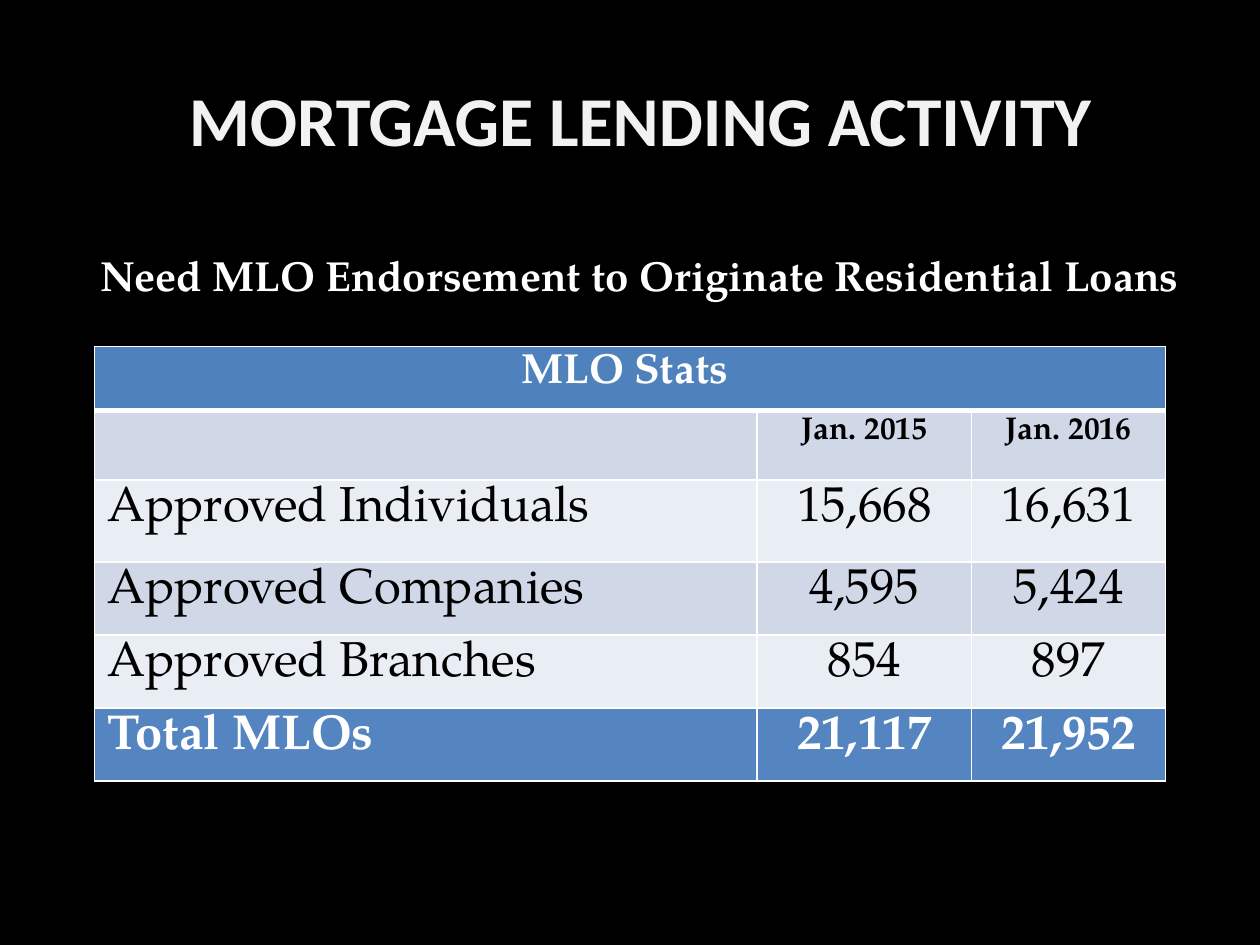
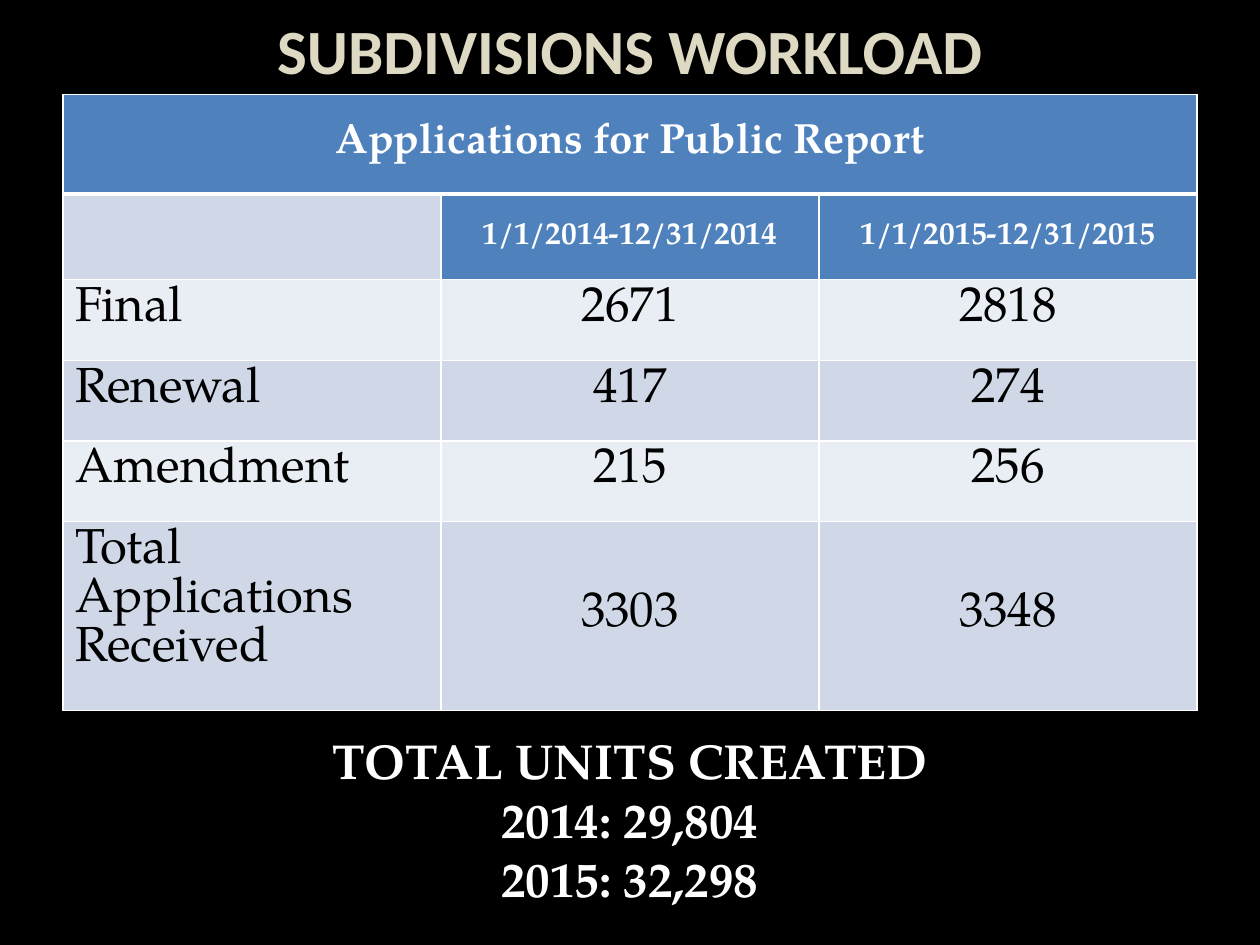
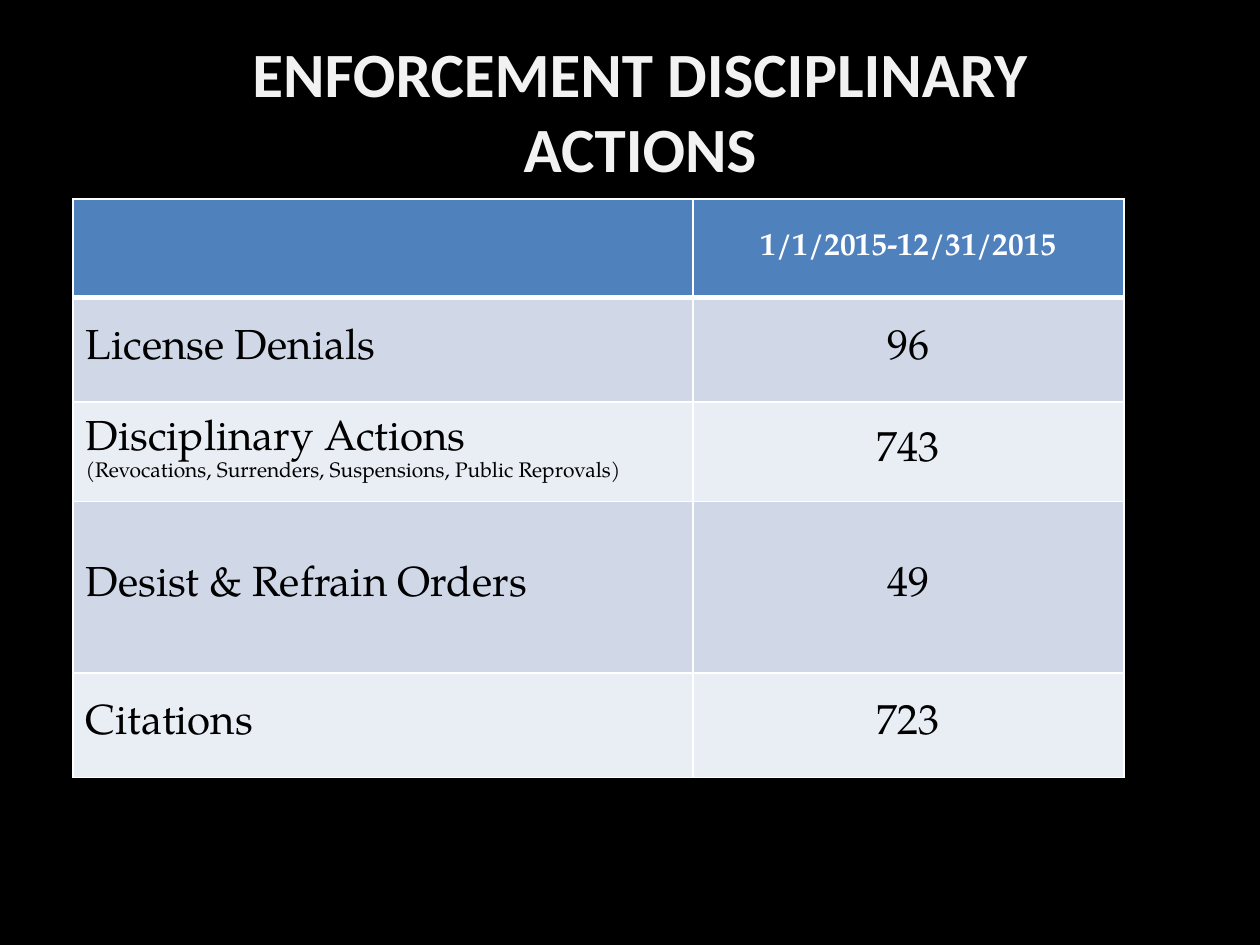
"""Build three black slides of licensing, subdivision and enforcement statistics."""
from dataclasses import dataclass

from lxml import etree
from pptx import Presentation
from pptx.dml.color import RGBColor
from pptx.enum.text import MSO_ANCHOR, MSO_AUTO_SIZE, PP_ALIGN
from pptx.oxml.ns import qn
from pptx.util import Inches, Pt


@dataclass(frozen=True)
class Theme:
    black: str = "000000"
    white: str = "FFFFFF"
    soft_white: str = "F2F2F2"
    sand: str = "DDD9C3"
    blue: str = "4F81BD"
    total_blue: str = "5485C0"
    band: str = "D0D8E8"
    pale: str = "E9EDF4"
    title_font: str = "Calibri"
    body_font: str = "TeX Gyre Pagella"
    title_large: int = 40
    title: int = 36
    large: int = 28
    medium: int = 24
    small: int = 18
    note: int = 12
    thin: int = 1
    thick: int = 3


THEME = Theme()
TOP, MIDDLE = MSO_ANCHOR.TOP, MSO_ANCHOR.MIDDLE


@dataclass(frozen=True)
class RowStyle:
    fill: str
    size: int
    color: str = THEME.black
    bold: bool = False
    label_anchor: MSO_ANCHOR = TOP
    value_anchor: MSO_ANCHOR = TOP


def header(size, anchor=MIDDLE):
    return RowStyle(THEME.blue, size, THEME.white, True, anchor, anchor)


BAND = RowStyle(THEME.band, THEME.large)
PALE = RowStyle(THEME.pale, THEME.large)
BAND_MIDDLE = RowStyle(THEME.band, THEME.medium, label_anchor=MIDDLE, value_anchor=MIDDLE)
PALE_MIDDLE = RowStyle(THEME.pale, THEME.medium, label_anchor=MIDDLE, value_anchor=MIDDLE)
BAND_TOTAL = RowStyle(THEME.band, THEME.large, value_anchor=MIDDLE)
MONTHS = RowStyle(THEME.band, THEME.small, bold=True)
TOTAL = RowStyle(THEME.total_blue, THEME.large, THEME.white, True)

SLIDES = [
    {
        "title": ("MORTGAGE LENDING ACTIVITY", THEME.title_large, THEME.soft_white,
                  (0.58, 0.63, 9, 0.62)),
        "table_at": (0.75, 2.75),
        "columns": (5.26, 1.7, 1.54),
        "rows": [
            (0.51, header(THEME.medium, TOP), ("MLO Stats ",)),
            (0.55, MONTHS, ("", "Jan. 2015", "Jan. 2016")),
            (0.65, PALE, ("Approved Individuals", "15,668", "16,631")),
            (0.58, BAND, ("Approved Companies", "4,595", "5,424")),
            (0.58, PALE, ("Approved Branches", "854", "897")),
            (0.58, TOTAL, ("Total MLOs", "21,117", "21,952")),
        ],
        "statement": ("Need MLO Endorsement to Originate Residential Loans",
                      THEME.medium, (0.15, 1.93, 9.85, 0.5)),
    },
    {
        "title": ("SUBDIVISIONS WORKLOAD", THEME.title, THEME.sand, (0.5, 0.08, 9, 0.62)),
        "table_at": (0.5, 0.75),
        "columns": (3, 3, 3),
        "rows": [
            (0.79, header(THEME.medium), ("Applications for Public Report",)),
            (0.68, header(THEME.small), ("", "1/1/2014-12/31/2014", "1/1/2015-12/31/2015")),
            (0.64, PALE, ("Final", "2671", "2818")),
            (0.64, BAND, ("Renewal", "417", "274")),
            (0.64, PALE, ("Amendment", "215", "256")),
            (1.5, BAND_TOTAL, ("Total Applications Received", "3303", "3348")),
        ],
        "statement": ("TOTAL UNITS CREATED\n2014: 29,804\n2015: 32,298",
                      THEME.large, (1, 5.75, 8, 1.5)),
    },
    {
        "title": ("ENFORCEMENT DISCIPLINARY\vACTIONS", THEME.title, THEME.soft_white,
                  (0.58, 0.27, 9, 1.2)),
        "table_at": (0.58, 1.58),
        "columns": (4.92, 3.42),
        "rows": [
            (0.78, header(THEME.small), ("", "1/1/2015-12/31/2015")),
            (0.83, BAND_MIDDLE, ("License Denials", "96")),
            (0.79, PALE_MIDDLE, ("Disciplinary Actions\n"
                                 "(Revocations, Surrenders, Suspensions, Public Reprovals)",
                                 "743")),
            (1.36, BAND_MIDDLE, ("Desist & Refrain Orders", "49")),
            (0.83, PALE_MIDDLE, ("Citations", "723")),
        ],
    },
]


def format_paragraph(paragraph, font, size, color, bold, align=PP_ALIGN.CENTER):
    paragraph.alignment = align
    for run in paragraph.runs:
        run.font.name = font
        run.font.size = Pt(size)
        run.font.bold = bold
        run.font.color.rgb = RGBColor.from_string(color)


def add_title(slide, wording, size, color, place):
    title = slide.shapes.title
    title.left, title.top, title.width, title.height = map(Inches, place)
    frame = title.text_frame
    frame.text = wording
    frame.word_wrap = True
    frame.auto_size = MSO_AUTO_SIZE.NONE
    frame.vertical_anchor = MIDDLE
    format_paragraph(frame.paragraphs[0], THEME.title_font, size, color, True)


def add_statement(slide, wording, size, place):
    frame = slide.shapes.add_textbox(*map(Inches, place)).text_frame
    frame.word_wrap = True
    frame.text = wording
    for paragraph in frame.paragraphs:
        format_paragraph(paragraph, THEME.body_font, size, THEME.white, True)


def add_borders(cell, row_index):
    widths = {
        "a:lnL": THEME.thin,
        "a:lnR": THEME.thin,
        "a:lnT": THEME.thick if row_index == 1 else THEME.thin,
        "a:lnB": THEME.thick if row_index == 0 else THEME.thin,
    }
    properties = cell._tc.get_or_add_tcPr()
    for edge, width in widths.items():
        line = etree.SubElement(properties, qn(edge), w=str(int(Pt(width))))
        fill = etree.SubElement(line, qn("a:solidFill"))
        etree.SubElement(fill, qn("a:srgbClr"), val=THEME.white)


def fill_cell(cell, wording, style, row_index, is_label):
    add_borders(cell, row_index)
    blank_below_header = row_index > 0 and not wording
    cell.fill.solid()
    cell.fill.fore_color.rgb = RGBColor.from_string(
        THEME.band if blank_below_header else style.fill)
    cell.vertical_anchor = style.label_anchor if is_label else style.value_anchor
    cell.text_frame.text = wording
    align = PP_ALIGN.LEFT if is_label else PP_ALIGN.CENTER
    for index, paragraph in enumerate(cell.text_frame.paragraphs):
        size = THEME.note if index else style.size
        format_paragraph(paragraph, THEME.body_font, size, style.color, style.bold, align)


def add_statistics(slide, place, columns, rows):
    height = sum(row[0] for row in rows)
    table = slide.shapes.add_table(
        len(rows), len(columns), *map(Inches, (*place, sum(columns), height))).table
    for column, width in zip(table.columns, columns):
        column.width = Inches(width)
    for row_index, (row_height, style, wordings) in enumerate(rows):
        table.rows[row_index].height = Inches(row_height)
        spans_table = len(wordings) == 1
        if spans_table:
            table.cell(row_index, 0).merge(table.cell(row_index, len(columns) - 1))
        padded = wordings + ("",) * (len(columns) - len(wordings))
        for column_index, wording in enumerate(padded):
            fill_cell(table.cell(row_index, column_index), wording, style, row_index,
                      column_index == 0 and not spans_table)


def main():
    deck = Presentation()
    deck.slide_width, deck.slide_height = Inches(10), Inches(7.5)
    backdrop = deck.slide_master.background.fill
    backdrop.solid()
    backdrop.fore_color.rgb = RGBColor.from_string(THEME.black)
    for content in SLIDES:
        slide = deck.slides.add_slide(deck.slide_layouts[5])
        add_title(slide, *content["title"])
        add_statistics(slide, content["table_at"], content["columns"], content["rows"])
        if "statement" in content:
            add_statement(slide, *content["statement"])
    deck.save("out.pptx")


if __name__ == "__main__":
    main()
